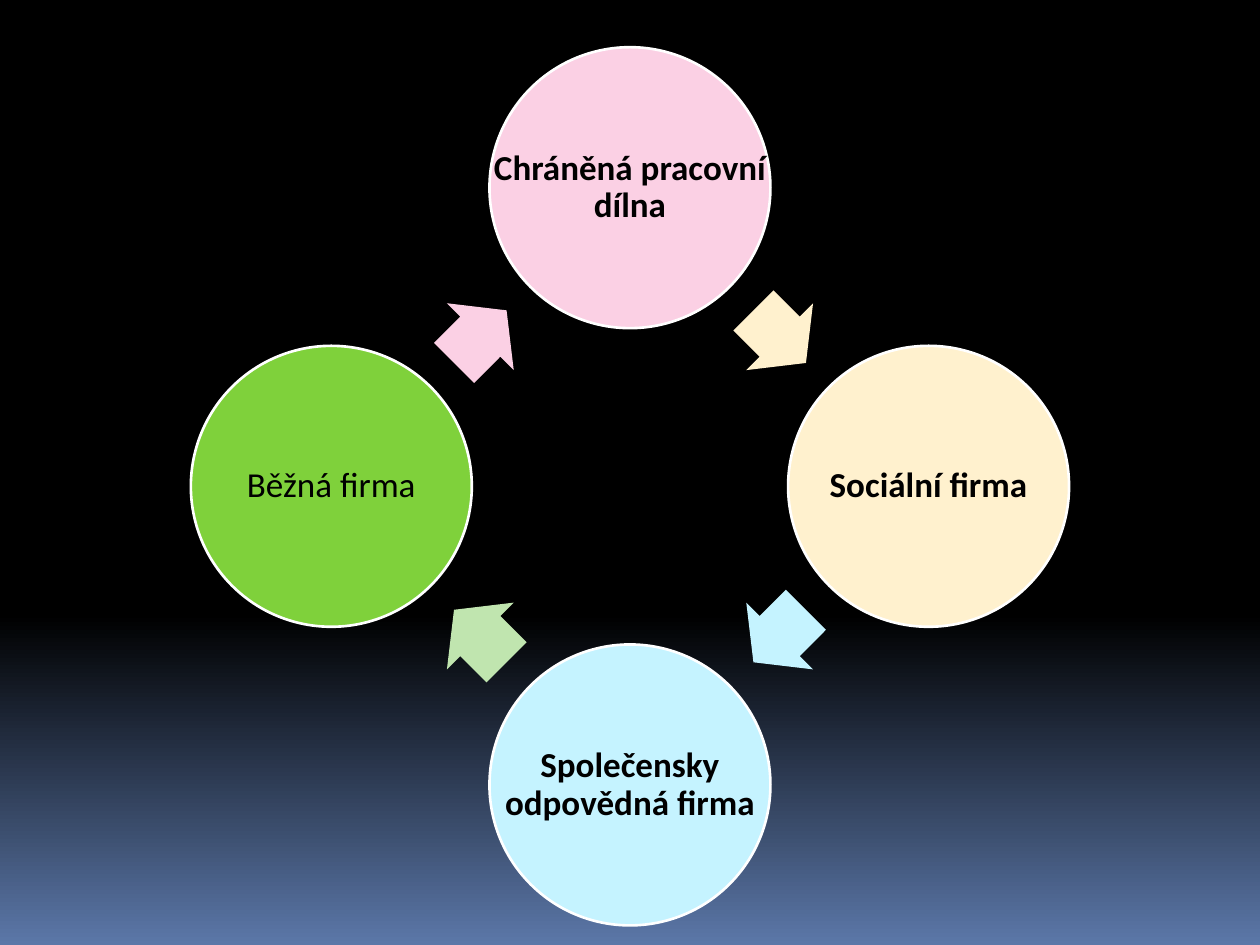
from math import cos, radians, sin

from pptx import Presentation
from pptx.dml.color import RGBColor
from pptx.enum.shapes import MSO_SHAPE as Shape
from pptx.enum.text import MSO_ANCHOR as Anchor, PP_ALIGN as Align
from pptx.util import Inches, Pt

WIDTH, HEIGHT = 10, 7.5
CENTRE_X, CENTRE_Y = WIDTH / 2, 3.86
RING_RADIUS = 2.37
DIAMETER = 2.23
ARROW_RADIUS, ARROW_LENGTH, ARROW_BREADTH = 1.68, 0.59, 0.75

COLOURS = {
    "black": "000000", "white": "FFFFFF", "horizon": "5B77A8",
    "pink": "FBD0E4", "cream": "FFF1CE", "ice": "C5F3FF",
    "green": "7FD13B", "pale green": "C0E5AF",
}

# Firm types clockwise from the top: label, bold, circle, following arrow
STAGES = [
    ("Chráněná pracovní dílna", True, "pink", "cream"),
    ("Sociální firma", True, "cream", "ice"),
    ("Společensky odpovědná firma", True, "ice", "pale green"),
    ("Běžná firma", False, "green", "pink"),
]


def colour(key):
    return RGBColor.from_string(COLOURS[key])


def ring_box(angle, radius, width, height):
    """Box centred on the ring, at an angle clockwise from the top."""
    x = CENTRE_X + radius * sin(radians(angle))
    y = CENTRE_Y - radius * cos(radians(angle))
    return [Inches(v) for v in (x - width / 2, y - height / 2, width, height)]


def apply_format(target, values):
    for attribute, value in values.items():
        setattr(target, attribute, value)


def paint_background(slide):
    fill = slide.background.fill
    fill.gradient()
    fill.gradient_angle = 270
    for stop, position, key in zip(fill.gradient_stops, (0.65, 1), ("black", "horizon")):
        stop.position = position
        stop.color.rgb = colour(key)


def add_filled(slide, preset, box, key):
    figure = slide.shapes.add_shape(preset, *box)
    figure.shadow.inherit = False
    figure.fill.solid()
    figure.fill.fore_color.rgb = colour(key)
    return figure


def add_circle(slide, box, key):
    outline = add_filled(slide, Shape.OVAL, box, key).line
    outline.color.rgb = colour("white")
    outline.width = Pt(1.5)


def add_label(slide, box, wording, bold):
    frame = slide.shapes.add_textbox(*box).text_frame
    margins = {f"margin_{side}": Inches(0.03) for side in ("left", "top", "right", "bottom")}
    apply_format(frame, {"word_wrap": True, "vertical_anchor": Anchor.MIDDLE, **margins})
    paragraph = frame.paragraphs[0]
    apply_format(paragraph, {"alignment": Align.CENTER, "line_spacing": 0.9})
    run = paragraph.add_run()
    run.text = wording
    apply_format(run.font, {"name": "Calibri", "size": Pt(20), "bold": bold})
    run.font.color.rgb = colour("black")


def add_arrow(slide, angle, key):
    box = ring_box(angle, ARROW_RADIUS, ARROW_LENGTH, ARROW_BREADTH)
    arrow = add_filled(slide, Shape.RIGHT_ARROW, box, key)
    arrow.line.fill.background()
    arrow.adjustments[0], arrow.adjustments[1] = 0.6, 0.5
    arrow.rotation = angle


def main():
    deck = Presentation()
    deck.slide_width, deck.slide_height = Inches(WIDTH), Inches(HEIGHT)
    slide = deck.slides.add_slide(deck.slide_layouts[6])
    paint_background(slide)

    # Cycle of circles, each followed by an arrow to the next
    step = 360 / len(STAGES)
    for index, (wording, bold, circle, arrow) in enumerate(STAGES):
        angle = index * step
        box = ring_box(angle, RING_RADIUS, DIAMETER, DIAMETER)
        add_circle(slide, box, circle)
        add_label(slide, box, wording, bold)
        add_arrow(slide, angle + step / 2, arrow)

    deck.save("out.pptx")


if __name__ == "__main__":
    main()
